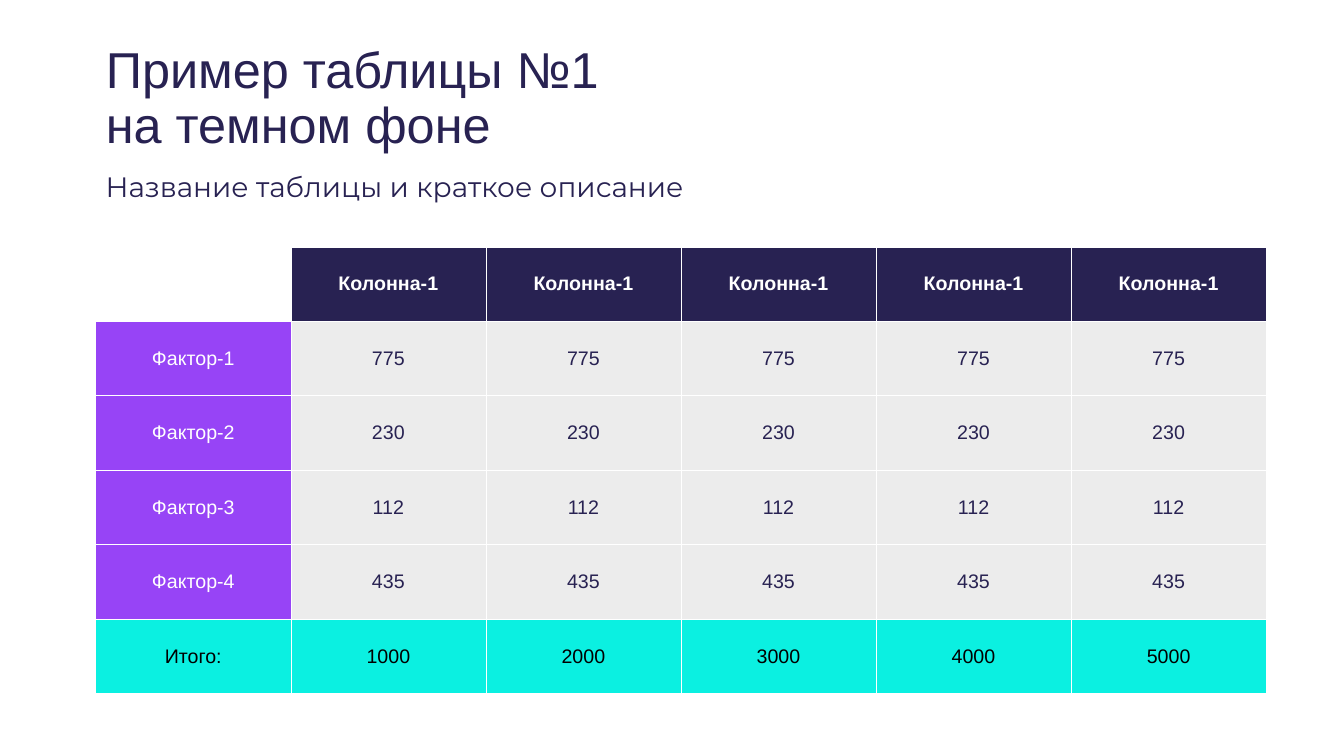
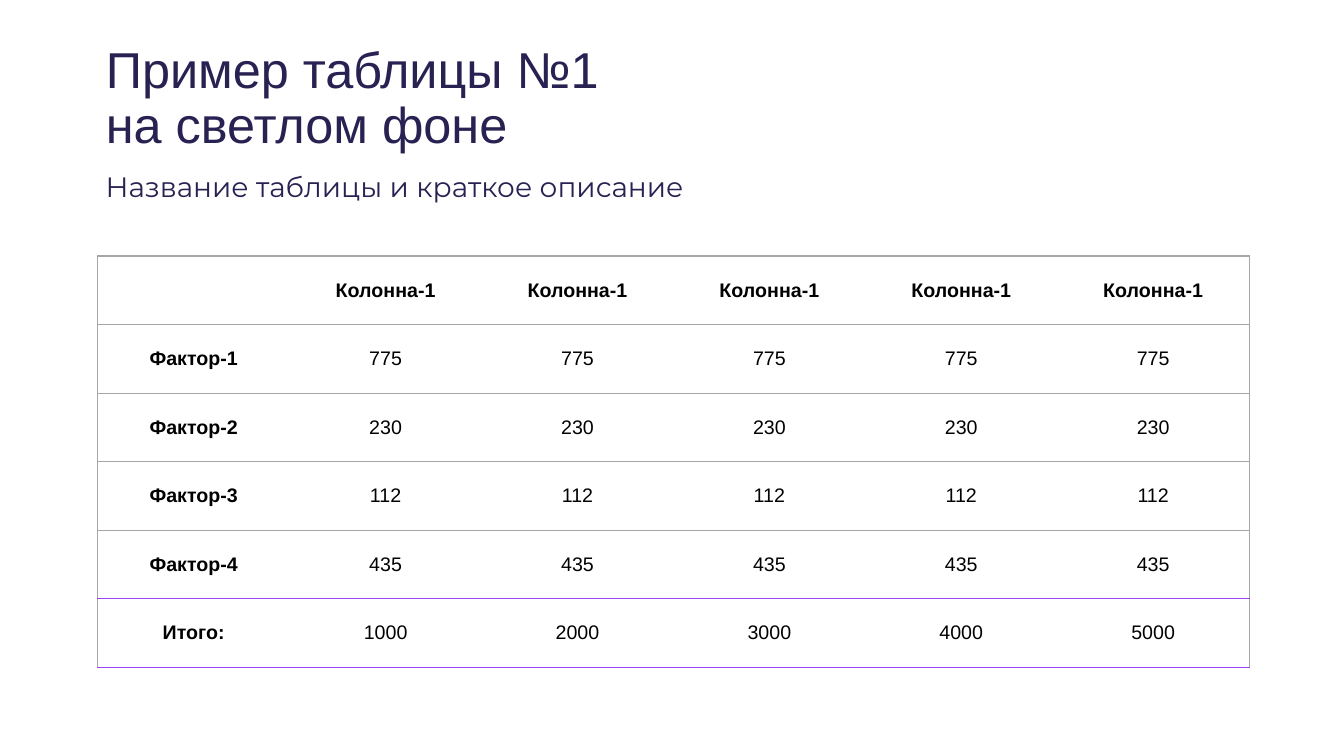
from pptx import Presentation
from pptx import util as u
from pptx.dml.color import RGBColor
from pptx.enum import text
from pptx.oxml.ns import qn
from lxml import etree

NAVY = RGBColor(0x28, 0x22, 0x52)
PURPLE = RGBColor(0x97, 0x44, 0xF6)
CYAN = RGBColor(0x0B, 0xF0, 0xE1)
PALE = RGBColor(0xEC, 0xEC, 0xEC)
GREY = RGBColor(0xA6, 0xA6, 0xA6)
WHITE = RGBColor(0xFF, 0xFF, 0xFF)
BLACK = RGBColor(0, 0, 0)

SUBTITLE = "Название таблицы и краткое описание"
COLUMNS = 5
FACTORS = [("Фактор-1", 775), ("Фактор-2", 230), ("Фактор-3", 112), ("Фактор-4", 435)]
ROWS = [
    [""] + ["Колонна-1"] * COLUMNS,
    *([name] + [str(value)] * COLUMNS for name, value in FACTORS),
    ["Итого:"] + [str(1000 * n) for n in range(1, COLUMNS + 1)],
]
LAST_ROW, LAST_COL = len(ROWS) - 1, COLUMNS


def filled_style(row, col):
    edges = dict.fromkeys("LRTB", WHITE)
    if row == LAST_ROW:
        return CYAN, BLACK, False, edges
    if row == 0:
        return (NAVY if col else None), WHITE, True, edges
    if col == 0:
        return PURPLE, WHITE, False, edges
    return PALE, NAVY, False, edges


def lined_style(row, col):
    edges = {
        "L": GREY if col == 0 else None,
        "R": GREY if col == LAST_COL else None,
        "T": PURPLE if row == LAST_ROW else GREY,
        "B": PURPLE if row >= LAST_ROW - 1 else GREY,
    }
    return WHITE, BLACK, row == 0 or col == 0, edges


SLIDES = [
    (["Пример таблицы №1", "на темном фоне"], (0.95, 2.45, 11.61, 4.43), 0.5, filled_style),
    (["Пример таблицы №1", "на светлом фоне"], (0.97, 2.54, 11.42, 4.08), 1, lined_style),
]


def place(sp, left, top, width, height):
    sp.left, sp.top = u.Inches(left), u.Inches(top)
    sp.width, sp.height = u.Inches(width), u.Inches(height)


def add_text(p, content, size, color, font="Arial", bold=False):
    r = p.add_run()
    r.text = content
    r.font.name, r.font.size, r.font.bold = font, u.Pt(size), bold
    r.font.color.rgb = color


def set_borders(cell, edges, width):
    props = cell._tc.get_or_add_tcPr()
    for side in "LRTB":
        color = edges[side]
        ln = etree.SubElement(props, qn("a:ln" + side), w=str(u.Pt(width) if color else 0))
        if color:
            fill = etree.SubElement(ln, qn("a:solidFill"))
            etree.SubElement(fill, qn("a:srgbClr"), val=str(color))
        else:
            etree.SubElement(ln, qn("a:noFill"))


def add_heading(s, lines):
    sp = s.shapes.title
    place(sp, 0.95, 0.4, 11.61, 1.45)
    tf = sp.text_frame
    tf.word_wrap, tf.auto_size = True, text.MSO_AUTO_SIZE.NONE
    tf.vertical_anchor = text.MSO_ANCHOR.TOP
    p = tf.paragraphs[0]
    p.alignment, p.line_spacing = text.PP_ALIGN.LEFT, 0.9
    for i, line in enumerate(lines):
        if i:
            p.add_line_break()
        add_text(p, line, 36, NAVY)

    sp = s.shapes.add_textbox(*map(u.Inches, (0.95, 1.63, 9.61, 0.44)))
    tf = sp.text_frame
    tf.word_wrap, tf.auto_size = True, text.MSO_AUTO_SIZE.SHAPE_TO_FIT_TEXT
    add_text(tf.paragraphs[0], SUBTITLE, 20, NAVY, "Montserrat")


def add_grid(s, box, line_width, style):
    table = s.shapes.add_table(len(ROWS), COLUMNS + 1, *map(u.Inches, box)).table
    table.first_row = table.horz_banding = False
    for row, values in enumerate(ROWS):
        for col, value in enumerate(values):
            cell = table.cell(row, col)
            fill, color, bold, edges = style(row, col)
            set_borders(cell, edges, line_width)
            if fill is None:
                cell.fill.background()
            else:
                cell.fill.solid()
                cell.fill.fore_color.rgb = fill
            cell.vertical_anchor = text.MSO_ANCHOR.MIDDLE
            p = cell.text_frame.paragraphs[0]
            p.alignment = text.PP_ALIGN.CENTER
            if value:
                add_text(p, value, 14, color, bold=bold)


def main():
    prs = Presentation()
    prs.slide_width, prs.slide_height = u.Inches(13.33), u.Inches(7.5)
    for lines, box, line_width, style in SLIDES:
        s = prs.slides.add_slide(prs.slide_layouts[5])
        add_heading(s, lines)
        add_grid(s, box, line_width, style)
    prs.save("out.pptx")


if __name__ == "__main__":
    main()
